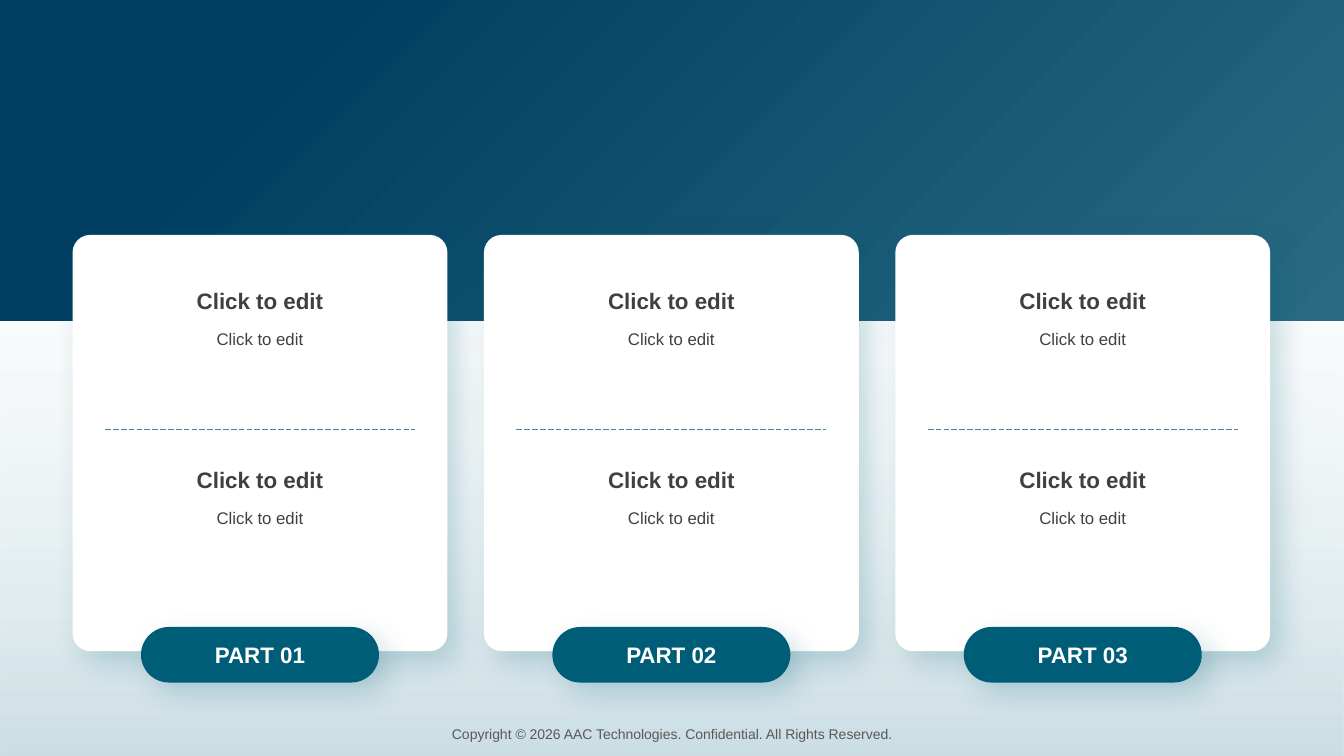
from pptx import Presentation, oxml
from pptx.dml.color import RGBColor
from pptx.enum import dml, shapes, text
from pptx.util import Cm, Pt

# Content
CARDS = [
    ("PART 01", [("Click to edit", "Click to edit"), ("Click to edit", "Click to edit")]),
    ("PART 02", [("Click to edit", "Click to edit"), ("Click to edit", "Click to edit")]),
    ("PART 03", [("Click to edit", "Click to edit"), ("Click to edit", "Click to edit")]),
]
FOOTER = "Copyright © 2026 AAC Technologies. Confidential. All Rights Reserved."

# Style
FONT = "Arial"
COLOR = {"teal": "005D77", "mist": "DCE8ED", "navy": "003F61", "sea": "2A6A82",
         "rule": "438A9C", "white": "FFFFFF", "ink": "404040", "grey": "595959"}
NS = 'xmlns:a="http://schemas.openxmlformats.org/drawingml/2006/main"'

# Layout in cm
WIDE, HIGH, BAND = 33.88, 19.05, 8.08
LEFT, PITCH, TOP = 1.83, 10.37, 5.92
CARD_W, CARD_H = 9.45, 10.49
TEXT_W, RULE_W, RULE_Y = 8.31, 7.81, 10.83
PILL_W, PILL_H, PILL_Y = 6, 1.4, 15.8
HEAD_Y, HEAD_H, BODY_Y, BODY_H, STEP = 6.81, 1.24, 8.15, 2.31, 4.51

prs = Presentation()
prs.slide_width, prs.slide_height = Cm(WIDE), Cm(HIGH)
slide = prs.slides.add_slide(prs.slide_layouts[6])


def rgb(name):
    return RGBColor.from_string(COLOR[name])


def add_box(kind, x, y, w, h):
    box = slide.shapes.add_shape(kind, Cm(x), Cm(y), Cm(w), Cm(h))
    box.shadow.inherit = False
    box.line.fill.background()
    return box


def add_fade(y, h, stops, way):
    """Full-width rectangle; stops are (position %, color, opacity %)."""
    box = add_box(shapes.MSO_SHAPE.RECTANGLE, 0, y, WIDE, h)
    marks = "".join(
        f'<a:gs pos="{pos * 1000}"><a:srgbClr val="{COLOR[name]}">'
        f'<a:alpha val="{alpha * 1000}"/></a:srgbClr></a:gs>'
        for pos, name, alpha in stops)
    fade = oxml.parse_xml(
        f'<a:gradFill {NS} rotWithShape="1"><a:gsLst>{marks}</a:gsLst>{way}</a:gradFill>')
    box._element.spPr.insert(2, fade)


def add_panel(x, y, w, h, name, bend):
    """Rounded panel with a soft shadow."""
    box = add_box(shapes.MSO_SHAPE.ROUNDED_RECTANGLE, x, y, w, h)
    box.adjustments[0] = bend
    box.fill.solid()
    box.fill.fore_color.rgb = rgb(name)
    box._element.spPr.find(oxml.ns.qn("a:effectLst")).append(oxml.parse_xml(
        f'<a:outerShdw {NS} blurRad="{Pt(20)}" dist="{Pt(10)}" dir="2700000" algn="tl" '
        f'rotWithShape="0"><a:srgbClr val="{COLOR["teal"]}"><a:alpha val="20000"/>'
        '</a:srgbClr></a:outerShdw>'))
    return box


def set_text(box, words, size, name, bold=False, anchor=text.MSO_ANCHOR.TOP, after=0):
    frame = box.text_frame
    frame.word_wrap = True
    frame.vertical_anchor = anchor
    frame.text = words
    para = frame.paragraphs[0]
    para.alignment = text.PP_ALIGN.CENTER
    para.space_after = Pt(after)
    font = para.runs[0].font
    font.name, font.size, font.bold = FONT, Pt(size), bold
    font.color.rgb = rgb(name)


def add_text(x, y, w, h, *style, **more):
    box = slide.shapes.add_textbox(Cm(x), Cm(y), Cm(w), Cm(h))
    set_text(box, *style, **more)
    return box


def add_rule(x, y, w):
    rule = slide.shapes.add_connector(
        shapes.MSO_CONNECTOR.STRAIGHT, Cm(x), Cm(y), Cm(x + w), Cm(y))
    rule.line.color.rgb = rgb("rule")
    rule.line.width = Pt(0.5)
    rule.line.dash_style = dml.MSO_LINE.LONG_DASH
    rule._element.spPr.append(oxml.parse_xml(f"<a:effectLst {NS}/>"))


# Backdrop
add_fade(0, HIGH, [(0, "teal", 20), (80, "mist", 0)], '<a:lin ang="16200000" scaled="0"/>')
add_fade(0, BAND, [(20, "navy", 100), (100, "sea", 100)],
         '<a:path path="circle"><a:fillToRect r="100000" b="100000"/></a:path>')

# Cards
for col, (part, blocks) in enumerate(CARDS):
    x = LEFT + col * PITCH
    mid = x + CARD_W / 2
    add_panel(x, TOP, CARD_W, CARD_H, "white", 0.047)
    pill = add_panel(mid - PILL_W / 2, PILL_Y, PILL_W, PILL_H, "teal", 0.5)
    set_text(pill, part, 16, "white", True, text.MSO_ANCHOR.MIDDLE)
    for row, (head, body) in enumerate(blocks):
        side, down = mid - TEXT_W / 2, row * STEP
        add_text(side, HEAD_Y + down, TEXT_W, HEAD_H, head, 16, "ink", True,
                 text.MSO_ANCHOR.BOTTOM, after=3)
        add_text(side, BODY_Y + down, TEXT_W, BODY_H, body, 12, "ink", after=3)
    add_rule(mid - RULE_W / 2, RULE_Y, RULE_W)

# Footer
foot = add_text((WIDE - 18.03) / 2, 18.16, 18.03, 0.69, FOOTER, 10, "grey")
foot.text_frame.auto_size = text.MSO_AUTO_SIZE.SHAPE_TO_FIT_TEXT

prs.save("out.pptx")
